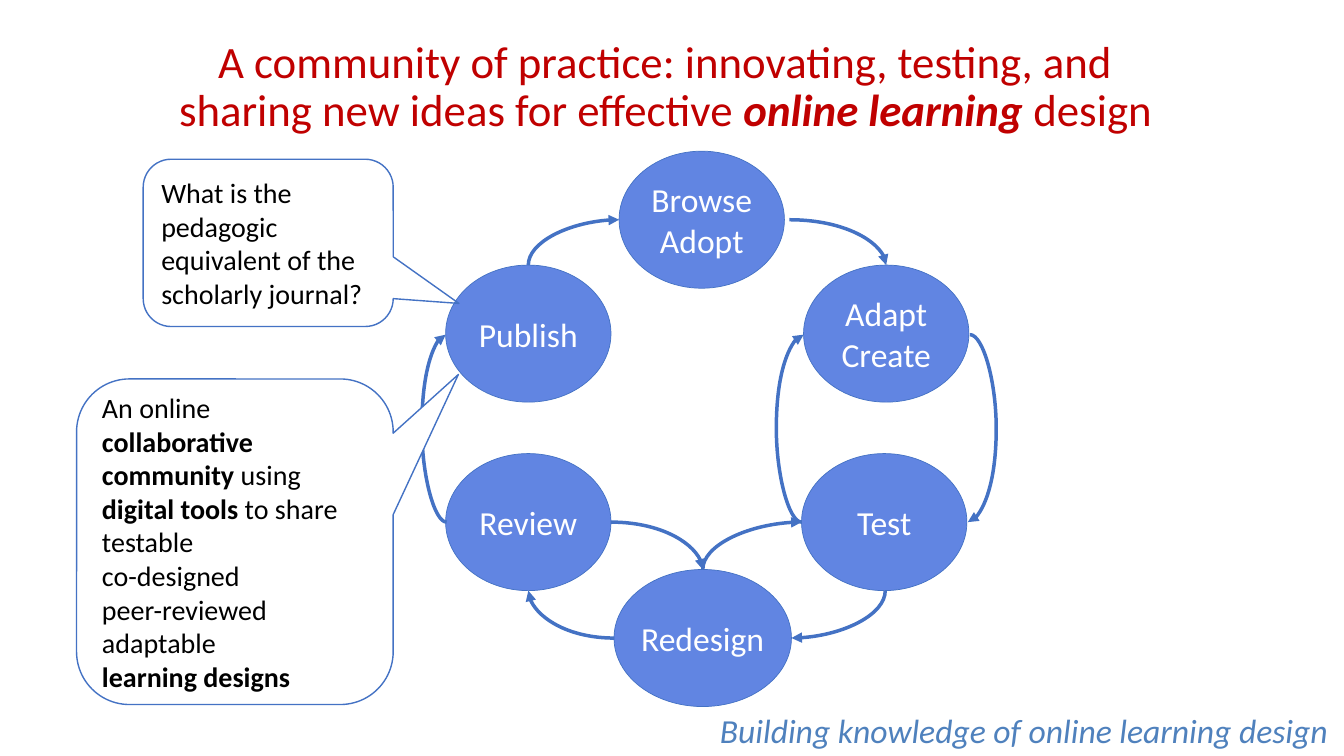
from lxml import etree
from pptx import Presentation
from pptx import util as u
from pptx.dml import color
from pptx.enum import shapes, text
from pptx.oxml import ns

BLUE = "4472C4"
BASE = {"name": "Calibri", "bold": False, "italic": False}
LEFT, MID, RIGHT = text.PP_ALIGN.LEFT, text.PP_ALIGN.CENTER, text.PP_ALIGN.RIGHT

NODES = [
    (6.14, 1.5, 1.64, ["Browse", "Adopt"]),
    (7.97, 2.63, 1.64, ["Adapt", "Create"]),
    (7.95, 4.5, 1.64, ["Test"]),
    (6.09, 5.65, 1.76, ["Redesign"]),
    (4.42, 4.5, 1.64, ["Review"]),
    (4.42, 2.63, 1.64, ["Publish"]),
]
LINKS = [
    ((7.83, 2.18), (8.79, 2.63), 0, None),
    ((9.62, 3.32), (9.6, 5.18), 0, 9.88),
    ((8.78, 5.86), (7.85, 6.33), 90, None),
    ((6.09, 6.33), (5.24, 5.86), 180, None),
    ((4.43, 5.18), (4.42, 3.32), 180, 4.18),
    ((5.24, 2.63), (6.14, 2.18), 90, None),
    ((7.95, 5.18), (7.97, 3.32), 180, 7.7),
    ((6.97, 5.65), (7.95, 5.18), 90, None),
    ((6.06, 5.18), (6.97, 5.65), 0, None),
]
ASK = [["What is the pedagogic equivalent of the scholarly journal?"]]
TOOLS = [
    ["An online ", ("collaborative community ", {"bold": True}), "using ",
     ("digital tools", {"bold": True}), " to share testable"],
    ["co-designed"],
    ["peer-reviewed adaptable"],
    [("learning designs", {"bold": True})],
]
HEAD = [
    ["A community of practice: innovating, testing, and"],
    ["sharing new ideas for effective ",
     ("online learning ", {"bold": True, "italic": True}), "design"],
]
FOOT = [[("Building knowledge of online learning design", {"italic": True})]]


def rgb(code):
    """Turn a hex string into a colour."""
    return color.RGBColor.from_string(code)


def put(obj, vals):
    """Set each attribute from a dict."""
    for key, val in vals.items():
        setattr(obj, key, val)


def write(frame, paras, size, tint, align, look, space=None):
    """Fill a text frame with paragraphs of plain or formatted runs."""
    put(frame, {"word_wrap": True, **look})
    for num, parts in enumerate(paras):
        para = frame.add_paragraph() if num else frame.paragraphs[0]
        put(para, {"alignment": align, "line_spacing": space, "space_before": u.Pt(0)})
        for part in parts:
            words, vals = (part, {}) if isinstance(part, str) else part
            run = para.add_run()
            run.text = words
            put(run.font, {**BASE, "size": u.Pt(size), **vals})
            run.font.color.rgb = rgb(tint)


def shape(slide, kind, box, fill, width):
    """Add a flat outlined shape in a box."""
    item = slide.shapes.add_shape(kind, *map(u.Inches, box))
    item.shadow.inherit = False
    if fill:
        item.fill.solid()
        item.fill.fore_color.rgb = rgb(fill)
    else:
        item.fill.background()
    item.line.color.rgb = rgb(BLUE)
    item.line.width = u.Pt(width)
    return item


def node(slide, box, words):
    """Add one stage of the cycle."""
    item = shape(slide, shapes.MSO_SHAPE.OVAL, box, "6185E2", 0.5)
    sides = ("margin_left", "margin_top", "margin_right", "margin_bottom")
    look = {"vertical_anchor": text.MSO_ANCHOR.MIDDLE, **dict.fromkeys(sides, 0)}
    write(item.text_frame, [[word] for word in words], 24, "FFFFFF", MID, look)


def link(slide, start, end, turn, bend):
    """Add a curved arrow, turned by a quarter or half, with an optional bend."""
    dx, dy = end[0] - start[0], end[1] - start[1]
    cx, cy = start[0] + dx / 2, start[1] + dy / 2
    wide, high = {0: (dx, dy), 90: (dy, -dx), 180: (-dx, -dy)}[turn]
    ends = (cx - wide / 2, cy - high / 2, cx + wide / 2, cy + high / 2)
    item = slide.shapes.add_connector(shapes.MSO_CONNECTOR.CURVE, *map(u.Inches, ends))
    item.line.color.rgb = rgb(BLUE)
    item.line.width = u.Pt(2.5)
    prop = item._element.spPr
    prop.find(ns.qn("a:xfrm")).set("rot", str(turn * 60000))
    geom = prop.find(ns.qn("a:prstGeom"))
    if bend is None:
        geom.set("prst", "curvedConnector2")
    else:
        rate = round((bend - start[0]) / dx * 100000)
        guide = etree.SubElement(geom.find(ns.qn("a:avLst")), ns.qn("a:gd"))
        put_xml(guide, {"name": "adj1", "fmla": f"val {rate}"})
    tip = etree.SubElement(prop.find(ns.qn("a:ln")), ns.qn("a:tailEnd"))
    put_xml(tip, {"type": "triangle"})
    etree.SubElement(prop, ns.qn("a:effectLst"))


def put_xml(elem, vals):
    """Set each XML attribute from a dict."""
    for key, val in vals.items():
        elem.set(key, val)


def cycle(slide):
    """Draw the ring of stages and its arrows."""
    for x, y, wide, words in NODES:
        node(slide, (x, y, wide, 1.36), words)
    for row in LINKS:
        link(slide, *row)


def bubble(slide, box, tail, fill, paras):
    """Add a speech bubble with its tail."""
    item = shape(slide, shapes.MSO_SHAPE.ROUNDED_RECTANGULAR_CALLOUT, box, fill, 1)
    for num, val in enumerate((*tail, 0.167)):
        item.adjustments[num] = val
    look = {"vertical_anchor": text.MSO_ANCHOR.MIDDLE}
    write(item.text_frame, paras, 20, "000000", LEFT, look)


def title(slide, box):
    """Place and fill the title."""
    item = slide.shapes.title
    put(item, dict(zip(("left", "top", "width", "height"), map(u.Inches, box))))
    look = {"vertical_anchor": text.MSO_ANCHOR.TOP, "auto_size": text.MSO_AUTO_SIZE.NONE}
    write(item.text_frame, HEAD, 32, "C00000", MID, look, 0.9)


def foot(slide, box):
    """Add the closing line."""
    item = slide.shapes.add_textbox(*map(u.Inches, box))
    write(item.text_frame, FOOT, 24, "4F81BD", RIGHT, {})


def main():
    """Build and save the slide."""
    deck = Presentation()
    put(deck, {"slide_width": u.Inches(13.33), "slide_height": u.Inches(7.5)})
    slide = deck.slides.add_slide(deck.slide_layouts[5])
    title(slide, (0.65, 0.34, 11.9, 0.95))
    cycle(slide)
    foot(slide, (4.31, 6.99, 8.96, 0.5))
    bubble(slide, (1.42, 1.58, 2.48, 1.66), (0.763, 0.362), None, ASK)
    bubble(slide, (0.76, 3.76, 3.14, 3.23), (0.706, -0.514), "FFFFFF", TOOLS)
    deck.save("out.pptx")


if __name__ == "__main__":
    main()
